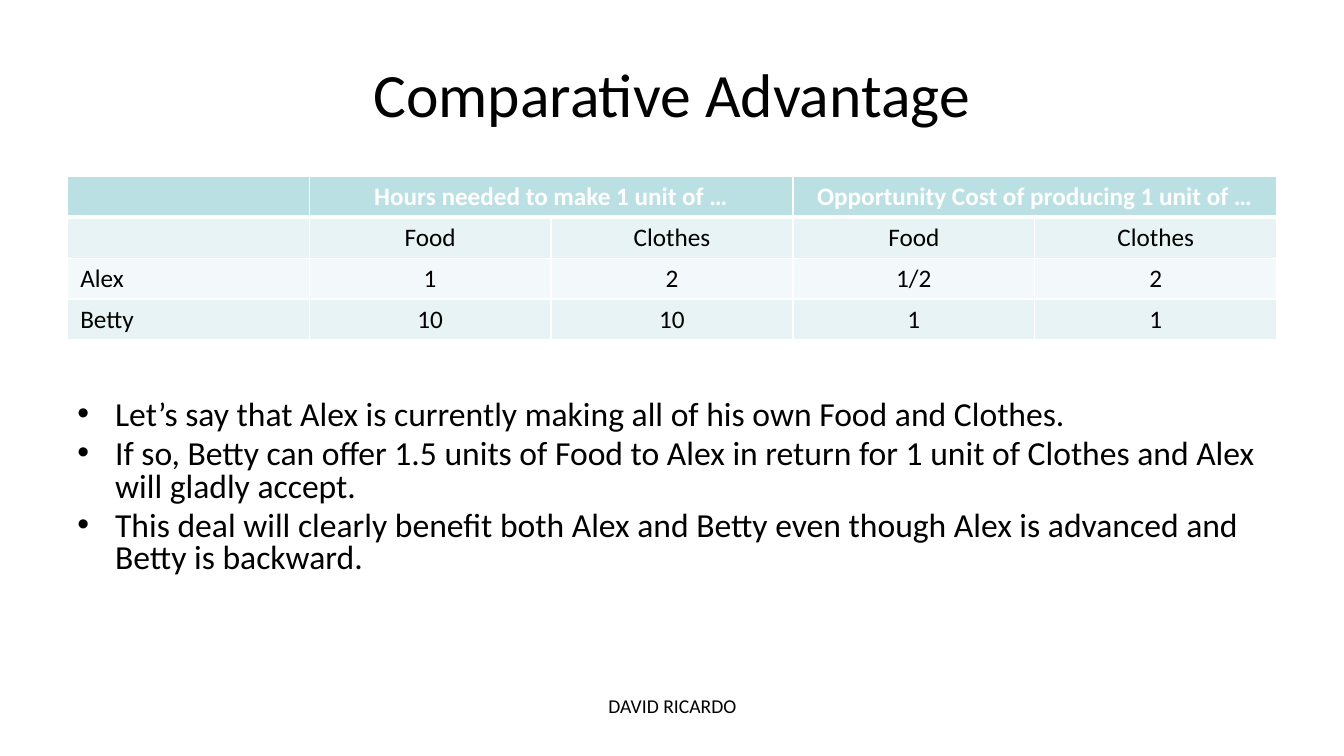
from lxml import etree
from pptx import Presentation
from pptx.dml.color import RGBColor
from pptx.enum.text import MSO_ANCHOR, MSO_AUTO_SIZE, PP_ALIGN
from pptx.oxml.ns import qn
from pptx.util import Inches, Pt

CENTER, LEFT = PP_ALIGN.CENTER, PP_ALIGN.LEFT
MIDDLE, TOP = MSO_ANCHOR.MIDDLE, MSO_ANCHOR.TOP
FIXED = MSO_AUTO_SIZE.NONE
WIDE, HIGH = 13.33, 7.5
EDGE = 0.05 * WIDE
SPAN = 0.9 * WIDE
BLACK, WHITE = "000000", "FFFFFF"
HEAD, BANDS = "BBE0E3", ("E7F3F4", "F3F9FA")

ROWS = [
    ["", "Hours needed to make 1 unit of …", "",
     "Opportunity Cost of producing 1 unit of …", ""],
    ["", "Food", "Clothes", "Food", "Clothes"],
    ["Alex", "1", "2", "1/2", "2"],
    ["Betty", "10", "10", "1", "1"],
]
POINTS = [
    "Let’s say that Alex is currently making all of his own Food and Clothes.",
    "If so, Betty can offer 1.5 units of Food to Alex in return for "
    "1 unit of Clothes and Alex will gladly accept.",
    "This deal will clearly benefit both Alex and Betty even though "
    "Alex is advanced and Betty is backward.",
]


def paint(color):
    """Turn a hex string into a colour."""
    return RGBColor.from_string(color)


def style(frame, size, align, color=BLACK, bold=False):
    """Format every paragraph and run of a text frame."""
    for para in frame.paragraphs:
        para.alignment = align
        for run in para.runs:
            font = run.font
            font.name, font.size, font.bold = "Calibri", Pt(size), bold
            font.color.rgb = paint(color)


def place(shape, box):
    """Move a shape to a box given in inches."""
    shape.left, shape.top, shape.width, shape.height = map(Inches, box)


def rule(cell, side, width):
    """Draw a white border on one side of a cell."""
    props = cell._tc.get_or_add_tcPr()
    line = etree.SubElement(props, qn("a:ln" + side), w=str(Pt(width)))
    fill = etree.SubElement(line, qn("a:solidFill"))
    etree.SubElement(fill, qn("a:srgbClr"), val=WHITE)


def add_title(slide, box):
    """Fill the title placeholder."""
    title = slide.shapes.title
    place(title, box)
    frame = title.text_frame
    frame.text = "Comparative Advantage"
    frame.vertical_anchor = MIDDLE
    frame.auto_size = FIXED
    style(frame, 44, CENTER)


def add_costs(slide, box):
    """Build the table of hours and opportunity costs."""
    count = len(ROWS[0])
    table = slide.shapes.add_table(len(ROWS), count, *map(Inches, box)).table
    for start in (1, 3):
        table.cell(0, start).merge(table.cell(0, start + 1))
    for r, row in enumerate(ROWS):
        for c, text in enumerate(row):
            cell = table.cell(r, c)
            cell.margin_left = cell.margin_right = Inches(0.13)
            cell.margin_top = cell.margin_bottom = Inches(0.05)
            for side in "LRTB":
                thick = (r, side) in ((0, "B"), (1, "T"))
                rule(cell, side, 3 if thick else 1)
            cell.fill.solid()
            cell.fill.fore_color.rgb = paint(BANDS[(r - 1) % 2] if r else HEAD)
            cell.text_frame.text = text
            style(cell.text_frame, 18, CENTER if c else LEFT,
                  BLACK if r else WHITE, r == 0)


def add_points(slide, box):
    """Fill the body placeholder with the bullet list."""
    body = slide.placeholders[1]
    place(body, box)
    frame = body.text_frame
    frame.text = "\n".join(POINTS)
    frame.vertical_anchor = TOP
    frame.auto_size = FIXED
    style(frame, 24, LEFT)
    for para in frame.paragraphs:
        para.line_spacing = 0.8


def add_foot(slide, box):
    """Add the centred footer text."""
    frame = slide.shapes.add_textbox(*map(Inches, box)).text_frame
    frame.word_wrap = True
    frame.text = "DAVID RICARDO"
    style(frame, 14, CENTER)


def main():
    """Build and save the slide."""
    deck = Presentation()
    deck.slide_width, deck.slide_height = Inches(WIDE), Inches(HIGH)
    slide = deck.slides.add_slide(deck.slide_layouts[1])
    add_title(slide, (EDGE, 0.04 * HIGH, SPAN, HIGH / 6))
    add_costs(slide, (EDGE, 1.75, SPAN, 1.62))
    add_foot(slide, (4.56, 6.83, 4.22, 0.52))
    add_points(slide, (EDGE, 3.93, SPAN, 2.52))
    deck.save("out.pptx")


if __name__ == "__main__":
    main()
